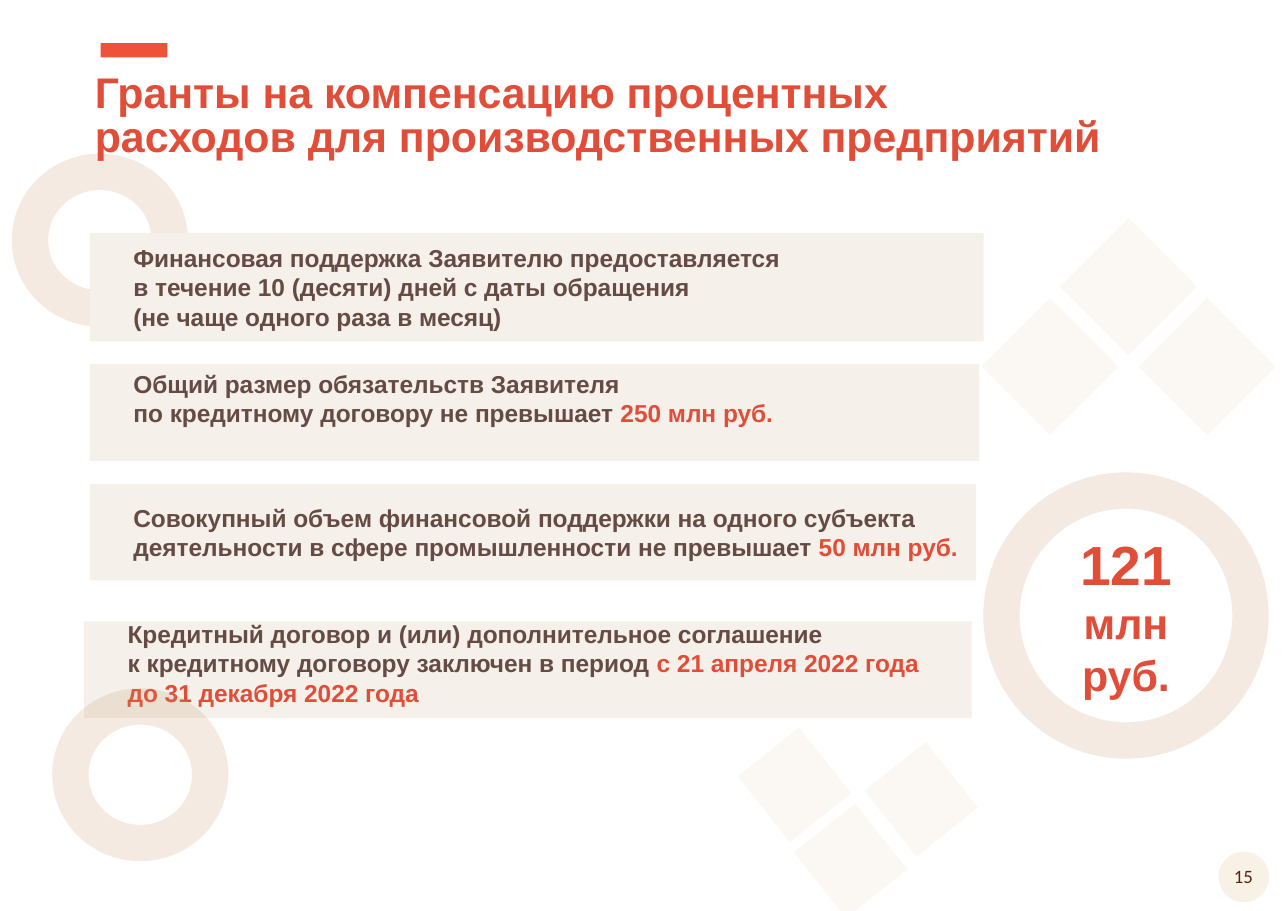
from dataclasses import dataclass

from lxml.etree import SubElement
from pptx import Presentation
from pptx.dml.color import RGBColor
from pptx.enum.shapes import MSO_SHAPE
from pptx.enum.text import MSO_ANCHOR, PP_ALIGN
from pptx.oxml.ns import qn
from pptx.util import Pt


@dataclass(frozen=True)
class Theme:
    accent: str = "E04E39"
    bar: str = "ED5338"
    body: str = "654B43"
    panel: str = "F5F1EA"
    ring: str = "C59368"
    tile: str = "EDD8C2"
    badge: str = "F7F2E5"
    number: str = "562212"
    font: str = "Arial"
    small_font: str = "Calibri"
    title_size: float = 28
    body_size: float = 16
    sum_size: float = 36
    page_size: float = 12.3


class Page:
    def __init__(self, slide, theme):
        self.slide = slide
        self.theme = theme

    def shape(self, kind, box, fill=None, alpha=None, turn=0):
        item = self.slide.shapes.add_shape(kind, *map(Pt, box))
        item.shadow.inherit = False
        item.line.fill.background()
        item.rotation = turn
        if fill:
            item.fill.solid()
            item.fill.fore_color.rgb = RGBColor.from_string(fill)
            self.fade(item, alpha)
        else:
            item.fill.background()
        return item

    def fade(self, item, alpha):
        if alpha:
            for color in item._element.spPr.iter(qn("a:srgbClr")):
                SubElement(color, qn("a:alpha"), val=str(alpha * 1000))

    def ring(self, box):
        item = self.shape(MSO_SHAPE.OVAL, box)
        item.line.color.rgb = RGBColor.from_string(self.theme.ring)
        item.line.width = Pt(23.75)
        self.fade(item, 18)

    def tile(self, box, turn):
        self.shape(MSO_SHAPE.RECTANGLE, box, self.theme.tile, 19, turn)

    def panel(self, box):
        return self.shape(MSO_SHAPE.RECTANGLE, box, self.theme.panel)

    def label(self, box, lines, **style):
        item = self.slide.shapes.add_textbox(*map(Pt, box))
        self.set_text(item.text_frame, lines, **style)

    def set_text(self, frame, lines, align=PP_ALIGN.LEFT, space=None, font=None):
        """Each line is a list of (text, size, color) runs."""
        frame.word_wrap = True
        for i, line in enumerate(lines):
            para = frame.paragraphs[0] if i == 0 else frame.add_paragraph()
            para.alignment = align
            if space:
                para.line_spacing = space
            for text, size, color in line:
                run = para.add_run()
                run.text = text
                run.font.name = font or self.theme.font
                run.font.size = Pt(size)
                run.font.bold = font is None
                run.font.color.rgb = RGBColor.from_string(color)

    def card(self, box, lines, foot=0):
        frame = self.panel(box).text_frame
        frame.vertical_anchor = MSO_ANCHOR.MIDDLE
        frame.margin_left = Pt(28.3)
        frame.margin_top = frame.margin_right = 0
        frame.margin_bottom = Pt(foot)
        self.set_text(frame, lines)


def main():
    deck = Presentation()
    deck.slide_width, deck.slide_height = Pt(841.7), Pt(595.4)
    theme = Theme()
    page = Page(deck.slides.add_slide(deck.slide_layouts[6]), theme)

    def plain(text):
        return text, theme.body_size, theme.body

    def strong(text, size=theme.body_size):
        return text, size, theme.accent

    # Page number
    page.shape(MSO_SHAPE.OVAL, (796.3, 556.6, 33, 33), theme.badge)
    page.label((794.2, 561.6, 36.7, 22.3), [[("15", theme.page_size, theme.number)]],
               align=PP_ALIGN.CENTER, font=theme.small_font)

    # Title
    page.shape(MSO_SHAPE.RECTANGLE, (65.8, 28.2, 43.6, 9.4), theme.bar)
    page.ring((19.6, 112.3, 91.4, 89.3))
    page.label((54.9, 44.6, 694.8, 64.8), [
        [strong("Гранты на компенсацию процентных", theme.title_size)],
        [strong("расходов для производственных предприятий", theme.title_size)],
    ], space=0.85)

    # Conditions
    page.card((58.9, 152.2, 584, 71), [
        [plain("Финансовая поддержка Заявителю предоставляется")],
        [plain("в течение 10 (десяти) дней с даты обращения")],
        [plain("(не чаще одного раза в месяц)")],
    ])
    page.card((58.9, 238, 581, 63.4), [
        [plain("Общий размер обязательств Заявителя")],
        [plain("по кредитному договору не превышает "), strong("250 млн руб.")],
    ], foot=19)
    page.card((58.9, 316.2, 579, 63.2), [
        [plain("Совокупный объем финансовой поддержки на одного субъекта "
               "деятельности в сфере промышленности не превышает "),
         strong("50 млн руб.")],
    ])
    page.panel((55, 406.1, 580, 63.2))
    page.label((76.3, 401, 601, 65.5), [
        [plain("Кредитный договор и (или) дополнительное соглашение")],
        [plain("к кредитному договору заключен в период "),
         strong("с 21 апреля 2022 года")],
        [strong("до 31 декабря 2022 года")],
    ])

    # Grant total
    page.label((677.5, 343.4, 116.6, 118.8), [
        [strong("121", theme.sum_size)],
        [strong("млн", theme.title_size)],
        [strong("руб.", theme.title_size)],
    ], align=PP_ALIGN.CENTER)
    page.ring((654.5, 320.6, 162.7, 163.4))

    # Background tiles
    for left, top in ((654.5, 208), (705.8, 155.7), (757.3, 208)):
        page.tile((left, top, 63.2, 63.2), 225)
    for left, top in ((574.6, 496.8), (528.5, 537.1), (491.8, 487.4)):
        page.tile((left, top, 54.7, 51.1), 51.6)
    page.ring((46, 461.7, 91.4, 89.3))

    deck.save("out.pptx")


if __name__ == "__main__":
    main()
